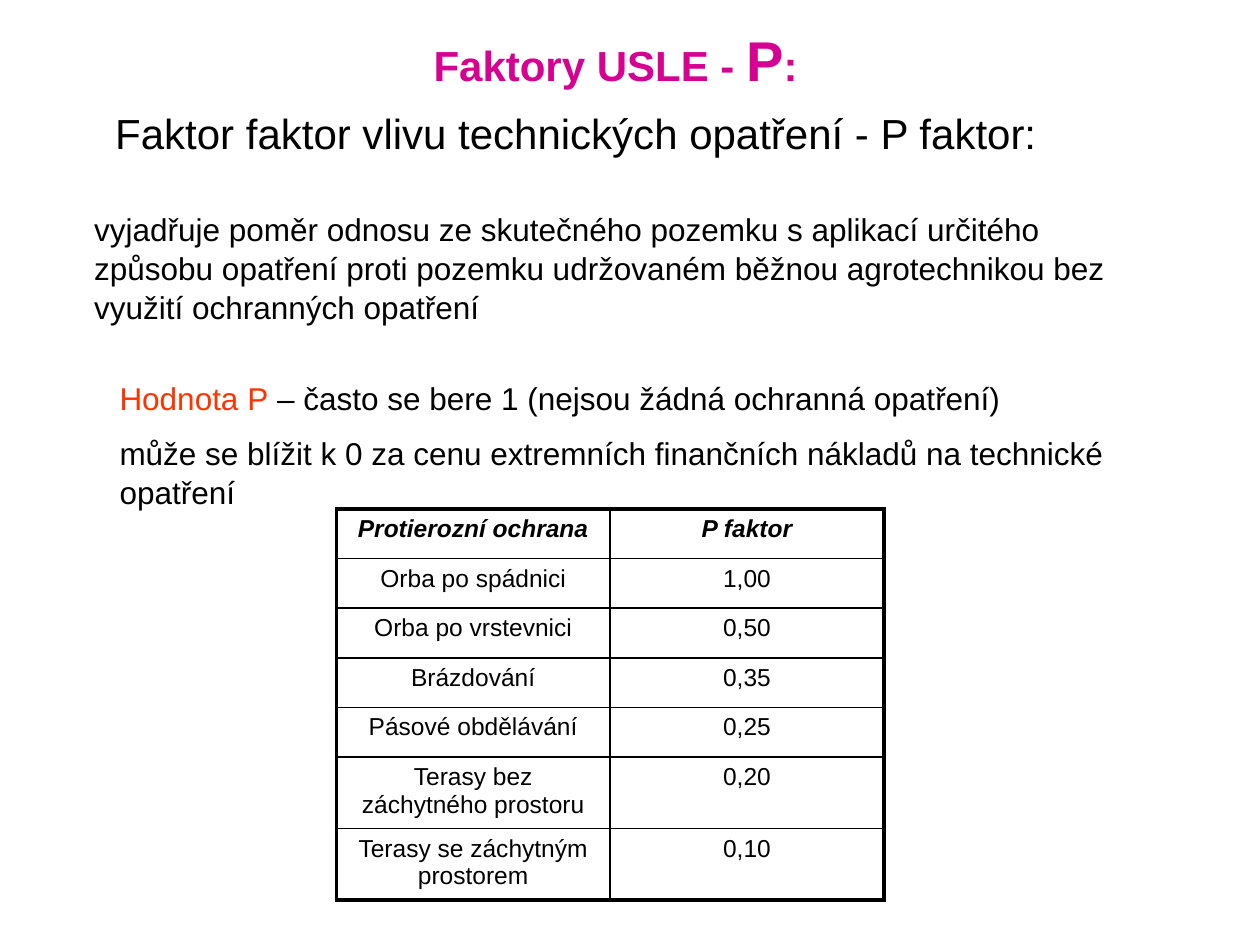
import lxml.etree
import pptx
import pptx.dml.color
import pptx.enum.text
import pptx.oxml.ns
import pptx.util

Cm = pptx.util.Cm
Pt = pptx.util.Pt
RGBColor = pptx.dml.color.RGBColor
ALIGN = pptx.enum.text.PP_ALIGN

BLACK = RGBColor(0x00, 0x00, 0x00)
MAGENTA = RGBColor(0xD6, 0x00, 0x93)
RED = RGBColor(0xFF, 0x33, 0x00)

TITLE = {"size": Pt(24), "bold": True, "color": MAGENTA}
TITLE_LETTER = {**TITLE, "size": Pt(32)}
SUBTITLE = {"size": Pt(24), "color": BLACK}
BODY = {"size": Pt(18), "color": BLACK}
BODY_RED = {**BODY, "color": RED}
CELL = {"size": Pt(14), "bold": False, "italic": False, "color": BLACK}
CELL_HEADER = {**CELL, "bold": True, "italic": True}


def add_run(paragraph, text, style):
    run = paragraph.add_run()
    run.text = text
    run.font.name = "Arial"
    for name, value in style.items():
        if name == "color":
            run.font.color.rgb = value
        else:
            setattr(run.font, name, value)


def add_border(cell, side, width):
    properties = cell._tc.get_or_add_tcPr()
    line = lxml.etree.SubElement(properties, pptx.oxml.ns.qn("a:ln" + side), w=str(Pt(width)))
    fill = lxml.etree.SubElement(line, pptx.oxml.ns.qn("a:solidFill"))
    lxml.etree.SubElement(fill, pptx.oxml.ns.qn("a:srgbClr"), val=str(BLACK))


presentation = pptx.Presentation()
presentation.slide_width = Cm(25.4)
presentation.slide_height = Cm(19.05)
slide = presentation.slides.add_slide(presentation.slide_layouts[6])

text_boxes = [
    ((6.91, 0.28, 11, 1.6), ALIGN.CENTER,
     [[("Faktory USLE - ", TITLE), ("P", TITLE_LETTER), (":", TITLE)]]),
    ((0, 1.93, 23.22, 1.27), ALIGN.CENTER,
     [[("Faktor faktor vlivu technických opatření - P faktor:", SUBTITLE)]]),
    ((1.65, 4.01, 22.12, 2.54), ALIGN.LEFT,
     [[("vyjadřuje poměr odnosu ze skutečného pozemku s aplikací určitého "
        "způsobu opatření proti pozemku udržovaném běžnou agrotechnikou bez "
        "využití ochranných opatření", BODY)]]),
    ((2.16, 7.42, 20.98, 2.92), ALIGN.LEFT,
     [[("Hodnota P", BODY_RED),
       (" – často se bere 1 (nejsou žádná ochranná opatření)", BODY)],
      [("může se blížit k 0 za cenu extremních finančních nákladů na "
        "technické opatření", BODY)]]),
]

for place, alignment, paragraphs in text_boxes:
    shape = slide.shapes.add_textbox(*[Cm(length) for length in place])
    frame = shape.text_frame
    frame.word_wrap = True
    frame.margin_top = Cm(0.2)
    for index, runs in enumerate(paragraphs):
        paragraph = frame.add_paragraph() if index else frame.paragraphs[0]
        paragraph.alignment = alignment
        paragraph.line_spacing = 1.03
        if index:
            paragraph.space_before = Pt(9)
        for text, style in runs:
            add_run(paragraph, text, style)

rows = [
    ("Protierozní ochrana", "P faktor"),
    ("Orba po spádnici", "1,00"),
    ("Orba po vrstevnici", "0,50"),
    ("Brázdování", "0,35"),
    ("Pásové obdělávání", "0,25"),
    ("Terasy bez záchytného prostoru", "0,20"),
    ("Terasy se záchytným prostorem", "0,10"),
]
heights = [1] * 5 + [1.43] * 2
last_row = len(rows) - 1

table = slide.shapes.add_table(
    len(rows), 2, Cm(6.78), Cm(10.26), Cm(11.04), Cm(sum(heights))).table
table.first_row = False
table.horz_banding = False
for column in table.columns:
    column.width = Cm(5.52)

for row_index, (texts, height) in enumerate(zip(rows, heights)):
    table.rows[row_index].height = Cm(height)
    for column_index, text in enumerate(texts):
        cell = table.cell(row_index, column_index)
        cell.margin_left = cell.margin_right = Cm(0.35)
        outer_sides = {
            "L": column_index == 0,
            "R": column_index == 1,
            "T": row_index == 0,
            "B": row_index == last_row,
        }
        for side, outer in outer_sides.items():
            add_border(cell, side, 2.25 if outer else 1)
        cell.fill.background()
        paragraph = cell.text_frame.paragraphs[0]
        paragraph.alignment = ALIGN.CENTER
        add_run(paragraph, text, CELL if row_index else CELL_HEADER)

presentation.save("out.pptx")
